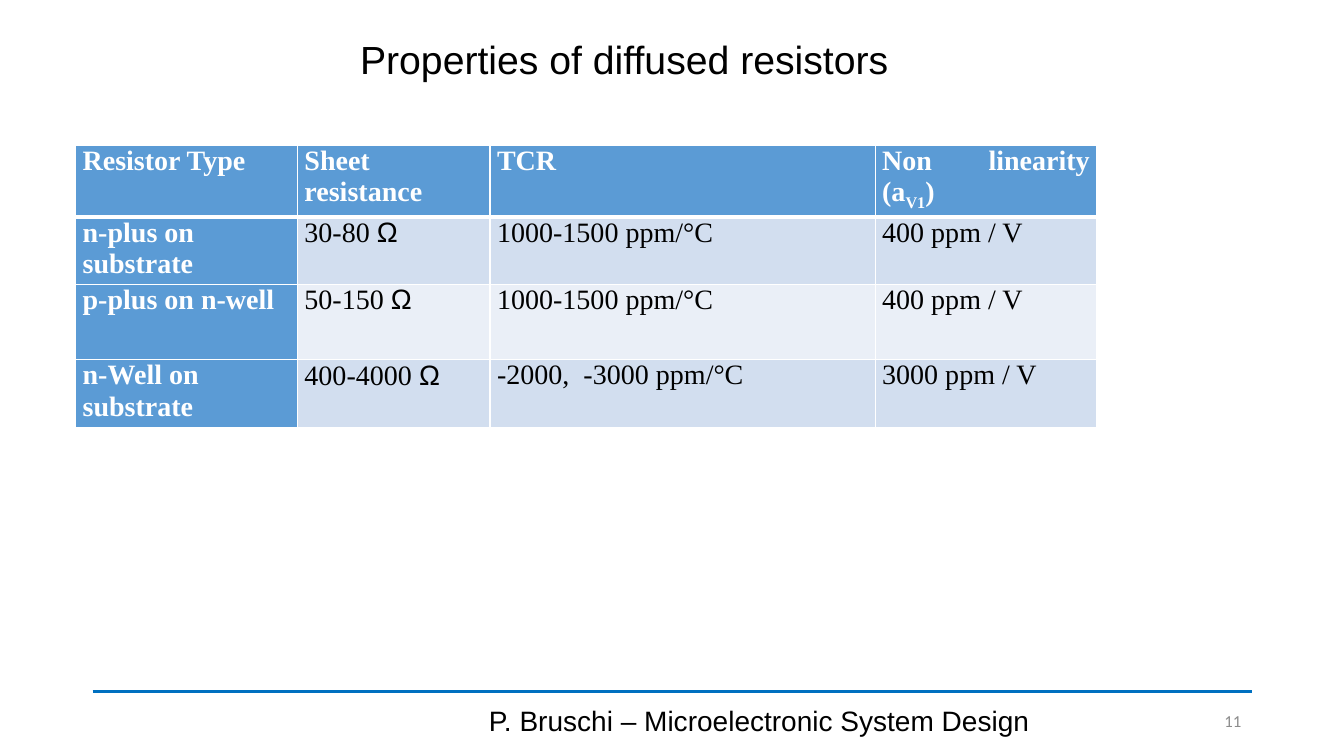
from dataclasses import dataclass

from lxml.etree import SubElement
from pptx import Presentation
from pptx.dml.color import RGBColor
from pptx.enum.shapes import MSO_CONNECTOR
from pptx.enum.text import MSO_ANCHOR, PP_ALIGN
from pptx.oxml import parse_xml
from pptx.oxml.ns import nsdecls, qn
from pptx.util import Inches, Pt


@dataclass(frozen=True)
class Theme:
    black: str = "000000"
    white: str = "FFFFFF"
    grey: str = "8C8C8C"
    rule: str = "0070C0"
    header: str = "5B9BD5"
    bands: tuple = ("D2DEEF", "EAEFF7")
    sans: str = "Arial"
    serif: str = "Times New Roman"
    number: str = "Calibri"
    title_size: int = 28
    body_size: int = 20
    number_size: int = 12


THEME = Theme()

COLUMN_WIDTHS = (2.2, 1.91, 3.82, 2.2)
ROW_HEIGHTS = (0.52, 0.52, 0.75, 0.52)
OHM = ("Ω", {"name": THEME.sans})
SUBSCRIPT = "-25000"
RESISTORS = (
    (["Resistor Type"], ["Sheet resistance "], ["TCR "],
     ["Non linearity (a", ("V1", {"baseline": SUBSCRIPT}), ")"]),
    (["n-plus on substrate"], ["30-80 ", OHM], ["1000-1500 ppm/°C"], ["400 ppm / V"]),
    (["p-plus on n-well"], ["50-150 ", OHM], ["1000-1500 ppm/°C"], ["400 ppm / V"]),
    (["n-Well on substrate"], ["400-4000 ", OHM], ["-2000,  -3000 ppm/°C "], ["3000 ppm / V"]),
)


def apply_format(target, values):
    for attribute, value in values.items():
        setattr(target, attribute, value)


def add_run(paragraph, text, color, baseline=None, **font_values):
    run = paragraph.add_run()
    run.text = text
    apply_format(run.font, font_values)
    run.font.color.rgb = RGBColor.from_string(color)
    if baseline:
        run.font._element.set("baseline", baseline)


def write_line(shape, box, text, color, font_values, paragraph_values):
    for attribute, value in zip(("left", "top", "width", "height"), box):
        setattr(shape, attribute, Inches(value))
    apply_format(shape.text_frame, {"word_wrap": True, "vertical_anchor": MSO_ANCHOR.MIDDLE})
    paragraph = shape.text_frame.paragraphs[0]
    apply_format(paragraph, paragraph_values)
    add_run(paragraph, text, color, **font_values)


def add_text(slide, box, text, color, font_values, alignment):
    shape = slide.shapes.add_textbox(*map(Inches, box))
    write_line(shape, box, text, color, font_values, {"alignment": alignment})


def add_rule(slide, left, right, top):
    connector = slide.shapes.add_connector(
        MSO_CONNECTOR.STRAIGHT, Inches(left), Inches(top), Inches(right), Inches(top))
    connector.line.color.rgb = RGBColor.from_string(THEME.rule)
    connector.line.width = Pt(2.75)
    SubElement(connector._element.spPr, qn("a:effectLst"))


def set_borders(cell, widths):
    properties = cell._tc.get_or_add_tcPr()
    for position, (side, width) in enumerate(widths.items()):
        border = parse_xml(
            f'<a:ln{side} {nsdecls("a")} w="{Pt(width)}"><a:solidFill>'
            f'<a:srgbClr val="{THEME.white}"/></a:solidFill></a:ln{side}>')
        properties.insert(position, border)


def format_cell(cell, runs, row, column):
    heading = row == 0 or column == 0
    fill = THEME.header if heading else THEME.bands[(row - 1) % 2]
    cell.fill.solid()
    cell.fill.fore_color.rgb = RGBColor.from_string(fill)
    apply_format(cell, {
        "margin_left": Inches(0.07), "margin_right": Inches(0.07),
        "margin_top": 0, "margin_bottom": 0, "vertical_anchor": MSO_ANCHOR.TOP})
    set_borders(cell, {"L": 1, "R": 1, "T": 3 if row == 1 else 1, "B": 3 if row == 0 else 1})
    paragraph = cell.text_frame.paragraphs[0]
    row_label = row > 0 and column == 0
    apply_format(paragraph, {
        "alignment": PP_ALIGN.LEFT if row_label else PP_ALIGN.JUSTIFY, "space_after": Pt(6)})
    base = {"name": THEME.serif, "size": Pt(THEME.body_size), "bold": heading}
    color = THEME.white if heading else THEME.black
    for item in runs:
        text, changes = (item, {}) if isinstance(item, str) else item
        add_run(paragraph, text, color, **{**base, **changes})


def add_resistor_table(slide, left, top):
    frame = slide.shapes.add_table(
        len(RESISTORS), len(COLUMN_WIDTHS), Inches(left), Inches(top),
        Inches(sum(COLUMN_WIDTHS)), Inches(sum(ROW_HEIGHTS)))
    table = frame.table
    apply_format(table, {"first_row": True, "first_col": True})
    for column, width in zip(table.columns, COLUMN_WIDTHS):
        column.width = Inches(width)
    for row, height in zip(table.rows, ROW_HEIGHTS):
        row.height = Inches(height)
    for row, cells in enumerate(RESISTORS):
        for column, runs in enumerate(cells):
            format_cell(table.cell(row, column), runs, row, column)


def main():
    presentation = Presentation()
    apply_format(presentation, {"slide_width": Inches(13.33), "slide_height": Inches(7.5)})
    slide = presentation.slides.add_slide(presentation.slide_layouts.get_by_name("Title Only"))

    add_rule(slide, 0.92, 12.42, 6.86)
    write_line(
        slide.shapes.title, (0.44, 0.25, 11.5, 0.72), "Properties of diffused resistors",
        THEME.black, {"name": THEME.sans, "size": Pt(THEME.title_size)},
        {"alignment": PP_ALIGN.CENTER, "line_spacing": 0.9})
    add_text(
        slide, (4.42, 6.95, 6.22, 0.4), "P. Bruschi – Microelectronic System Design",
        THEME.black, {"name": THEME.sans, "size": Pt(THEME.body_size)}, PP_ALIGN.CENTER)
    add_text(
        slide, (11.45, 6.95, 0.96, 0.4), "11",
        THEME.grey, {"name": THEME.number, "size": Pt(THEME.number_size)}, PP_ALIGN.RIGHT)
    add_resistor_table(slide, 0.75, 1.44)

    presentation.save("out.pptx")


if __name__ == "__main__":
    main()
